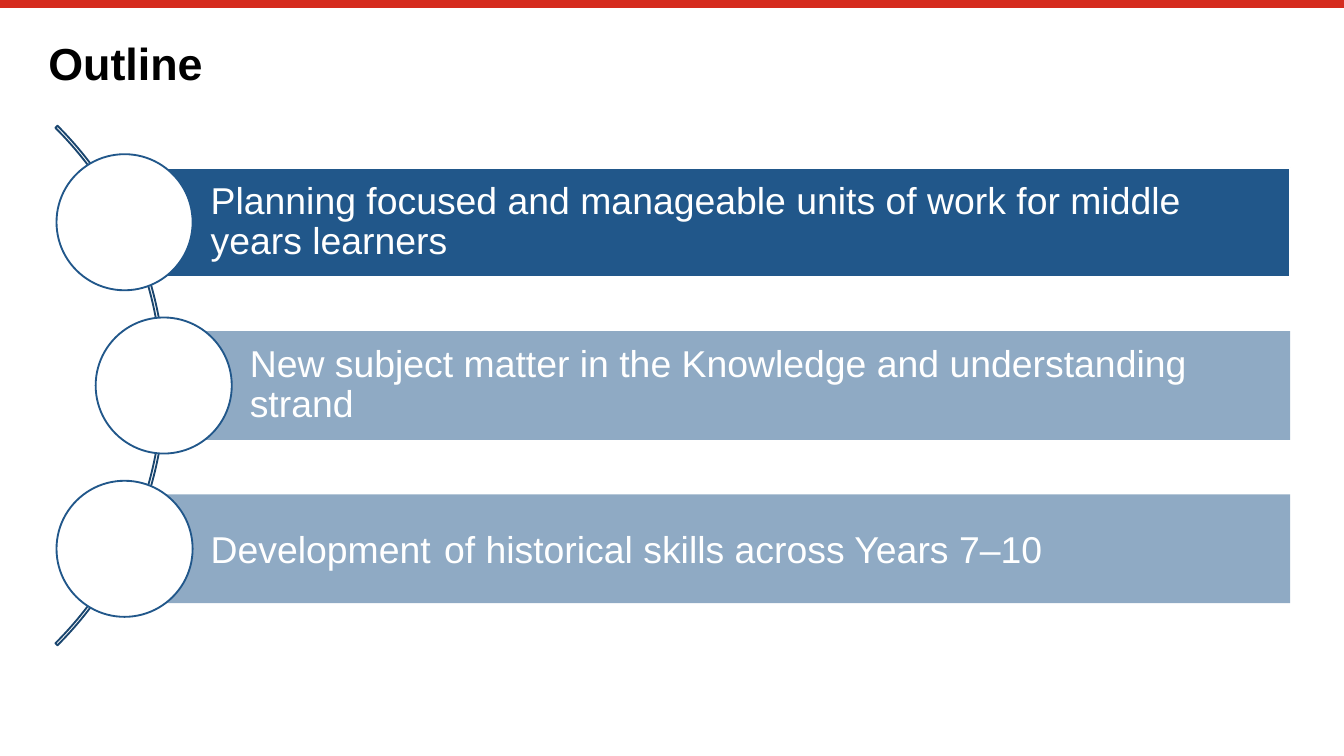
from lxml import etree
from pptx import Presentation
from pptx.dml.color import RGBColor
from pptx.enum.shapes import MSO_CONNECTOR, MSO_SHAPE
from pptx.enum.text import MSO_ANCHOR, MSO_AUTO_SIZE, PP_ALIGN
from pptx.oxml.ns import qn
from pptx.util import Inches, Pt

LINE = MSO_CONNECTOR.STRAIGHT
RECT, OVAL, ARC = MSO_SHAPE.RECTANGLE, MSO_SHAPE.OVAL, MSO_SHAPE.BLOCK_ARC
MIDDLE, LEFT, NO_FIT = MSO_ANCHOR.MIDDLE, PP_ALIGN.LEFT, MSO_AUTO_SIZE.NONE

W = 10
H = W * 9 / 16
FONT = "Arial"
COLORS = {"red": "D52B1E", "blue": "21578A", "navy": "1A466F",
          "white": "FFFFFF", "black": "000000"}

# Each topic is a list of (text, size) runs
TOPICS = [
    [("Planning focused and manageable units of work for middle years learners", 20)],
    [("New subject matter in the Knowledge and understanding strand", 20)],
    [("Development", 20), (" ", 25), ("of historical skills across Years 7–10", 20)],
]
CURRENT = 0  # the topic shown at full strength


def rgb(name):
    return RGBColor.from_string(COLORS[name])


def write(s, runs, *, color, bold=False, insets=(0, 0, 0, 0)):
    """Fill a shape with one left-aligned paragraph of (text, size) runs."""
    tf = s.text_frame
    tf.word_wrap, tf.auto_size, tf.vertical_anchor = True, NO_FIT, MIDDLE
    tf.margin_left, tf.margin_top, tf.margin_right, tf.margin_bottom = map(Inches, insets)
    p = tf.paragraphs[0]
    p.alignment, p.line_spacing = LEFT, 0.9
    for text, size in runs:
        r = p.add_run()
        r.text = text
        r.font.name, r.font.size, r.font.bold = FONT, Pt(size), bold
        r.font.color.rgb = rgb(color)


def add_shape(slide, kind, x, y, w, h, fill=None, line=None, alpha=100):
    s = slide.shapes.add_shape(kind, *map(Inches, (x, y, w, h)))
    s.shadow.inherit = False
    if fill:
        s.fill.solid()
        s.fill.fore_color.rgb = rgb(fill)
        if alpha < 100:
            clr = s.fill._xPr.find(".//" + qn("a:srgbClr"))
            etree.SubElement(clr, qn("a:alpha"), val=str(alpha * 1000))
    else:
        s.fill.background()
    if line:
        s.line.color.rgb = rgb(line)
        s.line.width = Pt(1)
    else:
        s.line.fill.background()
    return s


def add_header(slide, x, y, w, h):
    # Red band along the top edge
    band = slide.shapes.add_connector(LINE, 0, Inches(0.03), Inches(W), Inches(0.03))
    band.line.color.rgb = rgb("red")
    band.line.width = Pt(4.2)
    etree.SubElement(band._element.spPr, qn("a:effectLst"))
    # Title
    title = slide.shapes.title
    title.left, title.top, title.width, title.height = map(Inches, (x, y, w, h))
    write(title, [("Outline", 24)], color="black", bold=True)


def add_topic(slide, runs, cx, cy, right, bar, dot, current):
    """Bar from the circle's centre to the right edge, with the circle on top."""
    s = add_shape(slide, RECT, cx, cy - bar / 2, right - cx, bar, fill="blue",
                  line="white" if current else None, alpha=100 if current else 50)
    write(s, runs, color="white", insets=(0.64, 0.06, 0.06, 0.06))
    add_shape(slide, OVAL, cx - dot / 2, cy - dot / 2, dot, dot, fill="white", line="blue")


def add_curved_list(slide, topics, x, y, w, h):
    bar, dot, pitch, arc = h / 5, h / 4, 0.3 * h, 1.35 * h
    outer, inner = x + 0.14 * h, x + 0.212 * h
    mid = y + h / 2
    # Arc behind the circles, bulging right as far as the middle circle
    s = add_shape(slide, ARC, inner - arc + 0.01, mid - arc / 2, arc, arc, line="navy")
    for i, value in enumerate((189, 27, 0.004)):
        s.adjustments[i] = value
    # Topics, evenly spaced about the middle
    centre = (len(topics) - 1) / 2
    for i, runs in enumerate(topics):
        cx = inner if i == centre else outer
        add_topic(slide, runs, cx, mid + (i - centre) * pitch, x + w, bar, dot, i == CURRENT)


def main():
    prs = Presentation()
    prs.slide_width, prs.slide_height = Inches(W), Inches(H)
    slide = prs.slides.add_slide(prs.slide_layouts[5])
    add_header(slide, 0.036 * W, 0.052 * H, 0.93 * W, 0.07 * H)
    add_curved_list(slide, TOPICS, 0.036 * W, 0.15 * H, 0.924 * W, 0.72 * H)
    prs.save("out.pptx")


if __name__ == "__main__":
    main()
